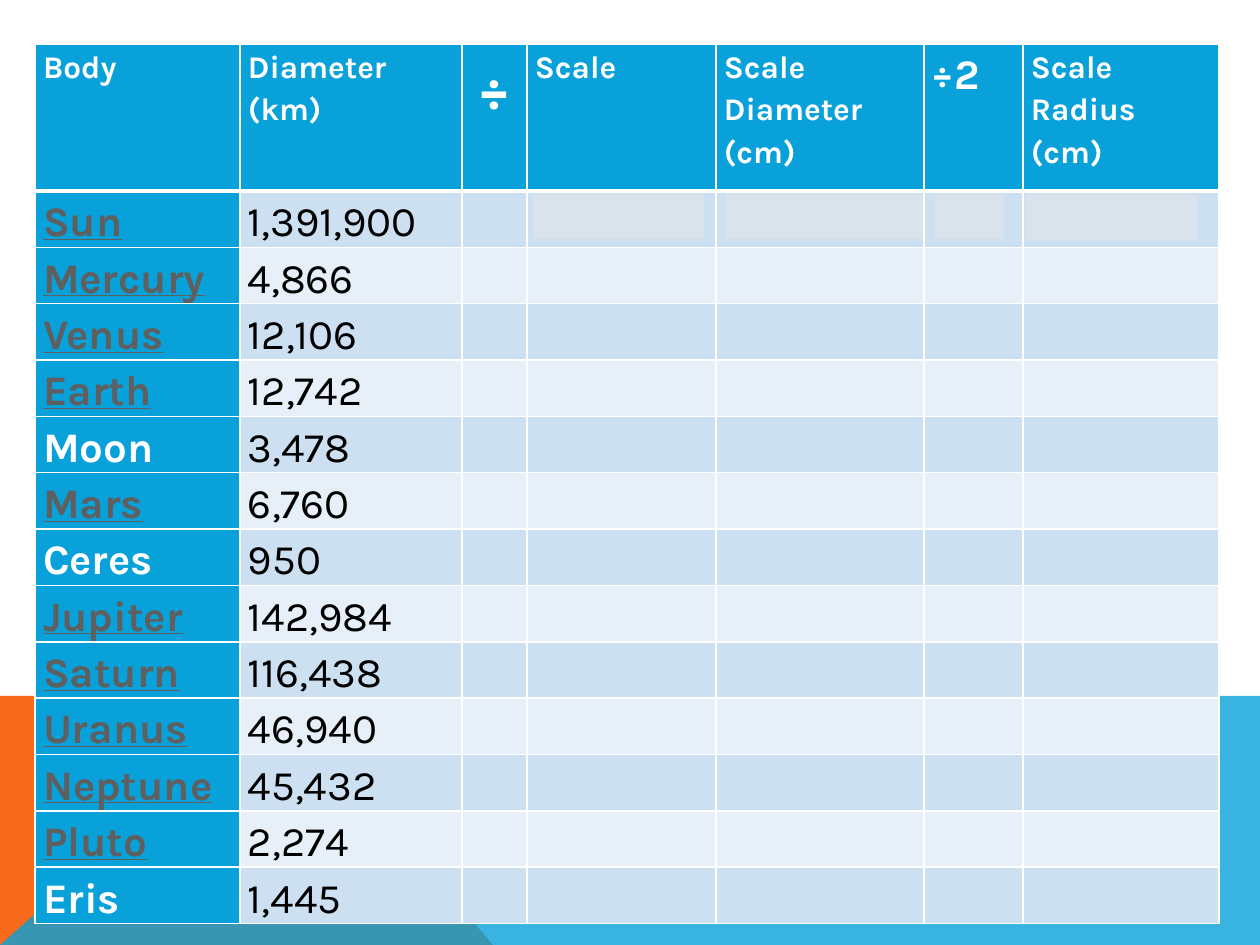
from dataclasses import dataclass

from lxml.etree import SubElement
from pptx import Presentation
from pptx.dml.color import RGBColor
from pptx.enum.shapes import MSO_SHAPE
from pptx.enum.text import MSO_ANCHOR, PP_ALIGN
from pptx.oxml.ns import qn
from pptx.util import Emu, Pt

BLUE, ORANGE, WHITE, BLACK = "08A1D9", "F96A1B", "FFFFFF", "000000"
LINK, MASK = "5F5F5F", "DAE2EB"
BANDS = ("CCE0F1", "E7F0F8")
COLUMN_WIDTHS = (205, 222, 65, 189, 208, 99, 196)
HEADER_HEIGHT, ROW_HEIGHT = 147, 56


@dataclass(frozen=True)
class Heading:
    text: str
    size: int = 18
    align: PP_ALIGN = PP_ALIGN.LEFT


@dataclass(frozen=True)
class Body:
    name: str
    diameter: str
    linked: bool = True


@dataclass(frozen=True)
class Cover:
    left: int
    width: int
    height: int = 44


@dataclass(frozen=True)
class Backdrop:
    points: tuple[tuple[int, int], ...]
    color: str
    opacity: int = 100


HEADINGS = (
    Heading("Body"),
    Heading("Diameter\n(km)"),
    Heading("÷", 36, PP_ALIGN.CENTER),
    Heading("Scale"),
    Heading("Scale Diameter\n(cm)"),
    Heading("÷2", 24),
    Heading("Scale Radius\n(cm)"),
)
BODIES = (
    Body("Sun", "1,391,900"),
    Body("Mercury", "4,866"),
    Body("Venus", "12,106"),
    Body("Earth", "12,742"),
    Body("Moon", "3,478", linked=False),
    Body("Mars", "6,760"),
    Body("Ceres", "950", linked=False),
    Body("Jupiter", "142,984"),
    Body("Saturn", "116,438"),
    Body("Uranus", "46,940"),
    Body("Neptune", "45,432"),
    Body("Pluto", "2,274"),
    Body("Eris", "1,445", linked=False),
)
COVERS = (Cover(533, 171), Cover(726, 197), Cover(1026, 171, 45), Cover(935, 69))
BACKDROPS = (
    Backdrop(((0, 945), (0, 696), (281, 696), (493, 945)), ORANGE),
    Backdrop(((0, 945), (281, 696), (1260, 696), (1260, 945)), BLUE, 80),
)


def px(length: int) -> Emu:
    """Turn pixels at 126 to the inch into EMU."""
    return Emu(round(length * 914400 / 126))


def paint(fill, color: str) -> None:
    """Give a fill one solid colour."""
    fill.solid()
    fill.fore_color.rgb = RGBColor.from_string(color)


def write(frame, text: str, *, size: int = 24, color: str = BLACK, bold: bool = False,
          underline: bool = False, align: PP_ALIGN = PP_ALIGN.LEFT) -> None:
    """Write text, one paragraph a line, in the given format."""
    frame.text = text
    for paragraph in frame.paragraphs:
        paragraph.alignment = align
        paragraph.line_spacing = 1.15
        for run in paragraph.runs:
            font = run.font
            font.name, font.size = "Karla", Pt(size)
            font.bold, font.underline = bold, underline
            font.color.rgb = RGBColor.from_string(color)


def style_cell(cell, color: str, top: int = 1, bottom: int = 1) -> None:
    """Set a cell's margins, white borders and fill."""
    cell.margin_left = cell.margin_right = px(8)
    cell.margin_top = cell.margin_bottom = 0
    properties = cell._tc.get_or_add_tcPr()
    for side, points in (("L", 1), ("R", 1), ("T", top), ("B", bottom)):
        line = SubElement(properties, qn(f"a:ln{side}"), w=str(Pt(points)))
        solid = SubElement(line, qn("a:solidFill"))
        SubElement(solid, qn("a:srgbClr"), val=WHITE)
    paint(cell.fill, color)


def draw_backdrop(slide, backdrop: Backdrop) -> None:
    """Draw one coloured area behind the table."""
    start, *others = [(px(x), px(y)) for x, y in backdrop.points]
    builder = slide.shapes.build_freeform(*start)
    builder.add_line_segments(others, close=True)
    area = builder.convert_to_shape()
    area.shadow.inherit = False
    area.line.fill.background()
    paint(area.fill, backdrop.color)
    if backdrop.opacity < 100:
        tint = area.fill._xPr.find(qn("a:solidFill"))[0]
        SubElement(tint, qn("a:alpha"), val=str(backdrop.opacity * 1000))


def draw_cover(slide, cover: Cover) -> None:
    """Draw one pale answer patch in the Sun's row."""
    patch = slide.shapes.add_shape(MSO_SHAPE.RECTANGLE, px(cover.left), px(195),
                                   px(cover.width), px(cover.height))
    patch.shadow.inherit = False
    patch.line.fill.background()
    paint(patch.fill, MASK)


def draw_table(slide) -> None:
    """Draw the headings and one row for each body."""
    height = HEADER_HEIGHT + ROW_HEIGHT * len(BODIES)
    table = slide.shapes.add_table(len(BODIES) + 1, len(HEADINGS), px(35), px(44),
                                   px(sum(COLUMN_WIDTHS)), px(height)).table
    table.first_col = True
    for column, width in zip(table.columns, COLUMN_WIDTHS):
        column.width = px(width)
    for index, row in enumerate(table.rows):
        row.height = px(ROW_HEIGHT if index else HEADER_HEIGHT)
    for cell, heading in zip(table.rows[0].cells, HEADINGS):
        style_cell(cell, BLUE, bottom=3)
        write(cell.text_frame, heading.text, size=heading.size, color=WHITE,
              bold=True, align=heading.align)
    for index, body in enumerate(BODIES):
        cells = list(table.rows[index + 1].cells)
        for column, cell in enumerate(cells):
            style_cell(cell, BANDS[index % 2] if column else BLUE, top=1 if index else 3)
        name, diameter = cells[:2]
        name.vertical_anchor = diameter.vertical_anchor = MSO_ANCHOR.MIDDLE
        write(name.text_frame, body.name, color=LINK if body.linked else WHITE,
              bold=True, underline=body.linked)
        write(diameter.text_frame, body.diameter)


def main() -> None:
    """Build the scale model worksheet and save it."""
    deck = Presentation()
    deck.slide_width, deck.slide_height = px(1260), px(945)
    slide = deck.slides.add_slide(deck.slide_layouts[6])
    for backdrop in BACKDROPS:
        draw_backdrop(slide, backdrop)
    draw_table(slide)
    for cover in COVERS:
        draw_cover(slide, cover)
    deck.save("out.pptx")


if __name__ == "__main__":
    main()
